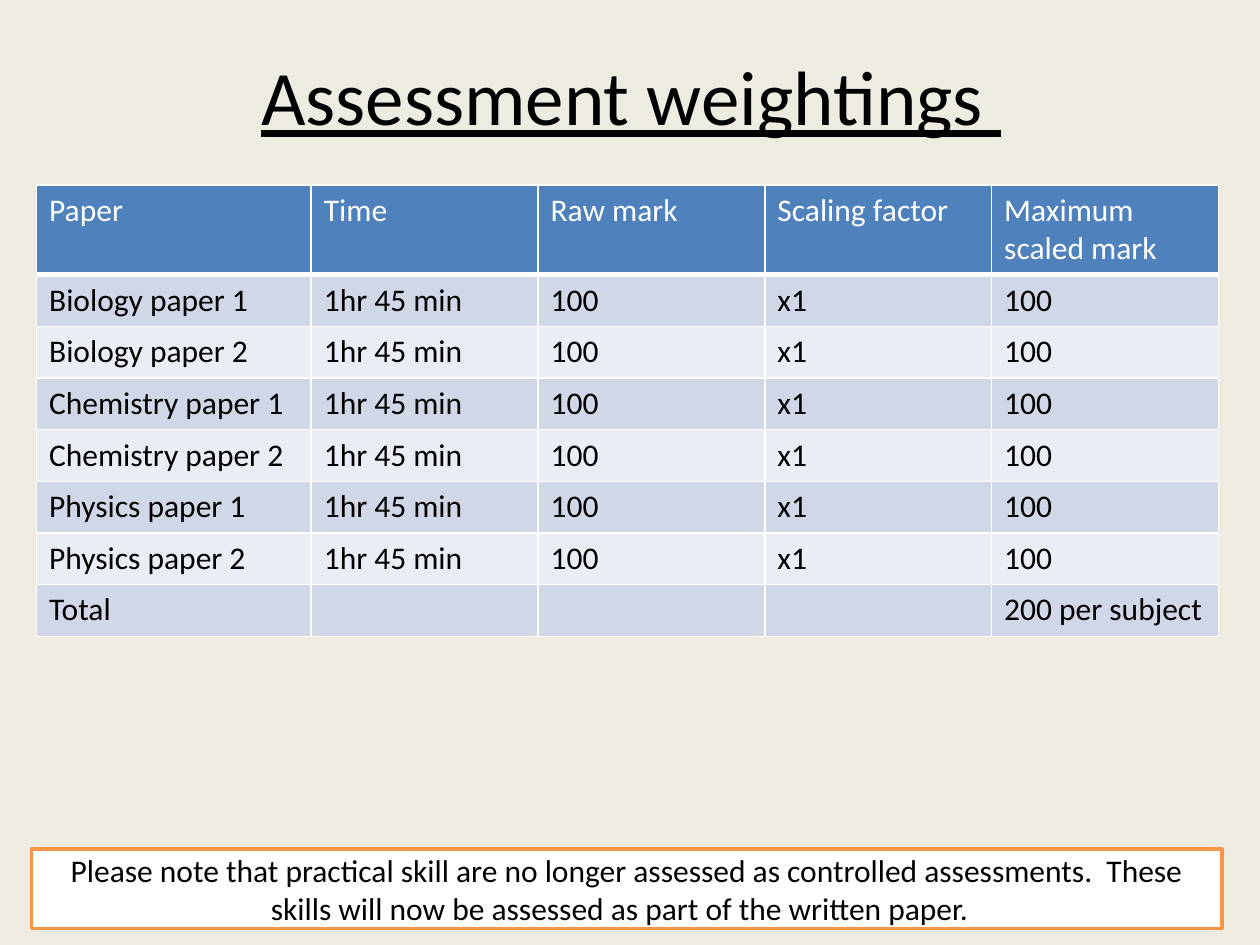
"""Build the assessment weightings slide."""
from lxml.etree import SubElement
from pptx import Presentation
from pptx.dml.color import RGBColor
from pptx.enum.shapes import MSO_SHAPE
from pptx.enum.text import MSO_ANCHOR, PP_ALIGN
from pptx.oxml.ns import qn
from pptx.util import Inches, Pt

COLOURS = {
    "background": "EEECE1",
    "text": "000000",
    "white": "FFFFFF",
    "header": "4F81BD",
    "odd_row": "D0D8E8",
    "even_row": "E9EDF4",
    "note_border": "F79646",
}
FONT = "Calibri"
HEADINGS = ["Paper", "Time", "Raw mark", "Scaling factor", "Maximum scaled mark"]
PAPERS = [f"{subject} paper {number}"
          for subject in ("Biology", "Chemistry", "Physics") for number in (1, 2)]
ROWS = [
    HEADINGS,
    *([paper, "1hr 45 min", "100", "x1", "100"] for paper in PAPERS),
    ["Total", "", "", "", "200 per subject"],
]
COLUMN_WIDTHS = [2.18, 1.8, 1.8, 1.8, 1.8]
ROW_HEIGHT = 0.41
NOTE = ("Please note that practical skill are no longer assessed as controlled "
        "assessments.  These skills will now be assessed as part of the written paper.  ")


def colour(name):
    """Return the named colour."""
    return RGBColor.from_string(COLOURS[name])


def fill_solid(fill, name):
    """Give a fill one named colour."""
    fill.solid()
    fill.fore_color.rgb = colour(name)


def add_text(paragraph, text, size, colour_name="text", underline=None):
    """Add one formatted run to a paragraph."""
    run = paragraph.add_run()
    run.text = text
    run.font.name = FONT
    run.font.size = Pt(size)
    run.font.underline = underline
    run.font.color.rgb = colour(colour_name)


def add_borders(cell, bottom_width):
    """Draw white borders round a cell, ahead of its fill."""
    properties = cell._tc.get_or_add_tcPr()
    for position, side in enumerate(("lnL", "lnR", "lnT", "lnB")):
        width = bottom_width if side == "lnB" else 1
        border = SubElement(properties, qn(f"a:{side}"), w=str(Pt(width)))
        solid = SubElement(border, qn("a:solidFill"))
        SubElement(solid, qn("a:srgbClr"), val=COLOURS["white"])
        properties.insert(position, border)


def place_title(slide, left, top, width, height):
    """Place the underlined title in its box."""
    title = slide.shapes.title
    title.left, title.top, title.width, title.height = left, top, width, height
    title.text_frame.vertical_anchor = MSO_ANCHOR.MIDDLE
    heading = title.text_frame.paragraphs[0]
    heading.alignment = PP_ALIGN.CENTER
    add_text(heading, "Assessment weightings ", 44, underline=True)


def place_weightings(slide, left, top, width, height):
    """Place the table of papers and marks in its box."""
    frame = slide.shapes.add_table(len(ROWS), len(HEADINGS), left, top, width, height)
    weightings = frame.table
    for column, column_width in zip(weightings.columns, COLUMN_WIDTHS):
        column.width = Inches(column_width)
    for index, values in enumerate(ROWS):
        weightings.rows[index].height = Inches(ROW_HEIGHT)
        is_header = index == 0
        band = "header" if is_header else "odd_row" if index % 2 else "even_row"
        for cell, value in zip(weightings.rows[index].cells, values):
            fill_solid(cell.fill, band)
            add_borders(cell, 3 if is_header else 1)
            if value:
                add_text(cell.text_frame.paragraphs[0], value, 18,
                         "white" if is_header else "text")
    frame.height = height


def place_note(slide, left, top, width, height):
    """Place the outlined note in its box."""
    note = slide.shapes.add_shape(MSO_SHAPE.RECTANGLE, left, top, width, height)
    note.shadow.inherit = False
    fill_solid(note.fill, "white")
    note.line.color.rgb = colour("note_border")
    note.line.width = Pt(2)
    note.text_frame.word_wrap = True
    note.text_frame.vertical_anchor = MSO_ANCHOR.MIDDLE
    message = note.text_frame.paragraphs[0]
    message.alignment = PP_ALIGN.CENTER
    add_text(message, NOTE, 18)


def main():
    """Build and save the presentation."""
    presentation = Presentation()
    presentation.slide_width = Inches(10)
    presentation.slide_height = Inches(7.5)
    slide = presentation.slides.add_slide(presentation.slide_layouts[5])
    fill_solid(slide.background.fill, "background")
    place_title(slide, Inches(0.51), Inches(0.13), Inches(9), Inches(1.25))
    place_weightings(slide, Inches(0.29), Inches(1.47), Inches(9.38), Inches(3.54))
    place_note(slide, Inches(0.25), Inches(6.74), Inches(9.45), Inches(0.63))
    presentation.save("out.pptx")


if __name__ == "__main__":
    main()
